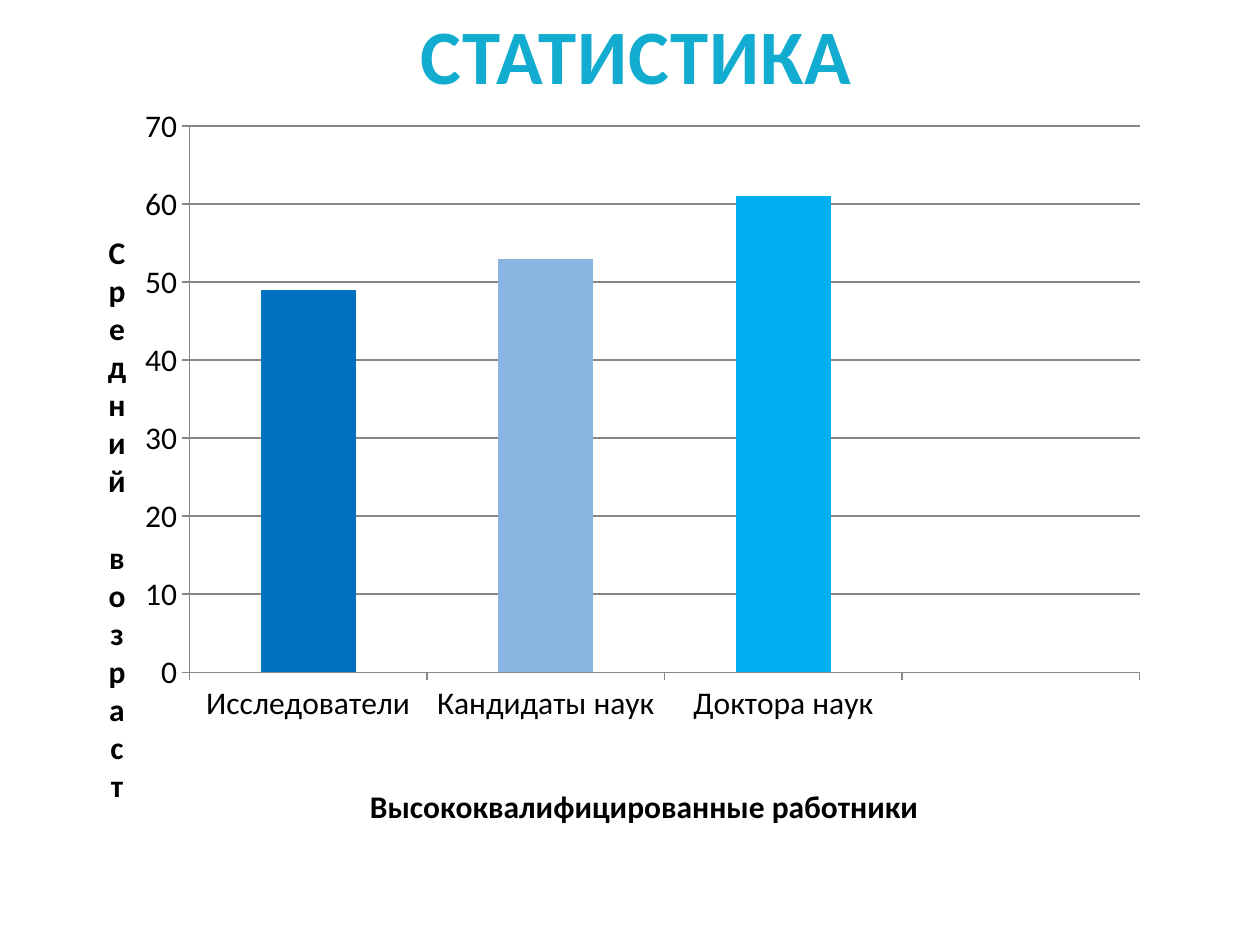
import pptx
import pptx.chart.data
import pptx.dml.color
import pptx.enum.chart
import pptx.enum.text
import pptx.oxml
import pptx.oxml.ns
import pptx.util

Inches = pptx.util.Inches
qn = pptx.oxml.ns.qn

COLORS = {
    "text": "000000",
    "grid": "878787",
    "top": "12ACD0",
    "base": "097C97",
    "staff": "0070C0",
    "cand": "8AB4E2",
    "doc": "00B0F0",
}


def tint(name):
    return pptx.dml.color.RGBColor.from_string(COLORS[name])


def write(frame, text, font="Calibri", size=18, bold=False, color="text", fade=None, space=0):
    para = frame.paragraphs[0]
    para.alignment = pptx.enum.text.PP_ALIGN.CENTER
    run = para.add_run()
    run.text = text
    run.font.name = font
    run.font.size = pptx.util.Pt(size)
    run.font.bold = bold
    if fade:
        run.font.fill.gradient()
        run.font.fill.gradient_angle = 270
        for stop, (name, place) in zip(run.font.fill.gradient_stops, fade):
            stop.color.rgb = tint(name)
            stop.position = place
    else:
        run.font.color.rgb = tint(color)
    if space:
        run._r.get_or_add_rPr().set("spc", str(int(space * 100)))


def place(node, index, inner=False, **sides):
    old = node.find(qn("c:layout"))
    if old is not None:
        node.remove(old)
    layout = pptx.oxml.parse_xml(f'<c:layout {pptx.oxml.ns.nsdecls("c")}><c:manualLayout/></c:layout>')
    fields = {"layoutTarget": "inner"} if inner else {}
    fields.update({"xMode": "edge", "yMode": "edge"}, **sides)
    for key, value in fields.items():
        layout[0].makeelement(qn(f"c:{key}"))
        item = pptx.oxml.parse_xml(f'<c:{key} {pptx.oxml.ns.nsdecls("c")} val="{value}"/>')
        layout[0].append(item)
    node.insert(index, layout)


class Deck:
    font = "Calibri"
    size = 18

    def __init__(self):
        self.file = pptx.Presentation()
        self.file.slide_width = Inches(10)
        self.file.slide_height = Inches(7.5)
        self.slide = self.file.slides.add_slide(self.file.slide_layouts[6])

    def label(self, text, left, top, width, height, **style):
        box = self.slide.shapes.add_textbox(Inches(left), Inches(top), Inches(width), Inches(height))
        box.text_frame.word_wrap = True
        box.text_frame.auto_size = pptx.enum.text.MSO_AUTO_SIZE.SHAPE_TO_FIT_TEXT
        write(box.text_frame, text, font=self.font, **style)

    def axis(self, axis, title, x, y):
        axis.major_tick_mark = pptx.enum.chart.XL_TICK_MARK.OUTSIDE
        axis.minor_tick_mark = pptx.enum.chart.XL_TICK_MARK.NONE
        axis.format.line.color.rgb = tint("grid")
        frame = axis.axis_title.text_frame
        write(frame, title, font=self.font, size=self.size, bold=True)
        place(axis.axis_title._element, 1, x=x, y=y)
        return frame

    def bars(self, names, values, fills, left, top, width, height):
        data = pptx.chart.data.CategoryChartData()
        data.categories = names
        data.add_series("Series 1", values)
        kind = pptx.enum.chart.XL_CHART_TYPE.COLUMN_CLUSTERED
        chart = self.slide.shapes.add_chart(
            kind, Inches(left), Inches(top), Inches(width), Inches(height), data
        ).chart
        chart.has_legend = False
        chart.has_title = False
        chart.font.name = self.font
        chart.font.size = pptx.util.Pt(self.size)
        chart.font.color.rgb = tint("text")
        plot = chart.plots[0]
        plot.gap_width = 150
        plot.vary_by_categories = False
        series = plot.series[0]
        series.format.fill.solid()
        series.format.fill.fore_color.rgb = tint(fills[0])
        for index, name in enumerate(fills[1:], 1):
            fill = series.points[index].format.fill
            fill.solid()
            fill.fore_color.rgb = tint(name)
        self.axis(chart.category_axis, "Высококвалифицированные работники", 0.27, 0.91)
        scale = chart.value_axis
        frame = self.axis(scale, "Средний возраст", 0.03, 0.18)
        frame._txBody.find(qn("a:bodyPr")).set("vert", "wordArtVert")
        scale.minimum_scale = 0
        scale.maximum_scale = 70
        scale.major_unit = 10
        scale.has_major_gridlines = True
        scale.major_gridlines.format.line.color.rgb = tint("grid")
        area = chart._chartSpace.find(".//" + qn("c:plotArea"))
        place(area, 0, inner=True, x=0.11, y=0.05, w=0.87, h=0.72)


def main():
    deck = Deck()
    deck.bars(
        ["Исследователи", "Кандидаты наук", "Доктора наук", ""],
        [49, 53, 61, None],
        ["staff", "cand", "doc"],
        0.55, 0.7, 8.67, 6.02,
    )
    deck.label(
        "СТАТИСТИКА", 1.77, 0.01, 6.56, 0.84,
        size=44, bold=True, fade=[("top", 0.25), ("base", 1)], space=0.5,
    )
    deck.file.save("out.pptx")


if __name__ == "__main__":
    main()
